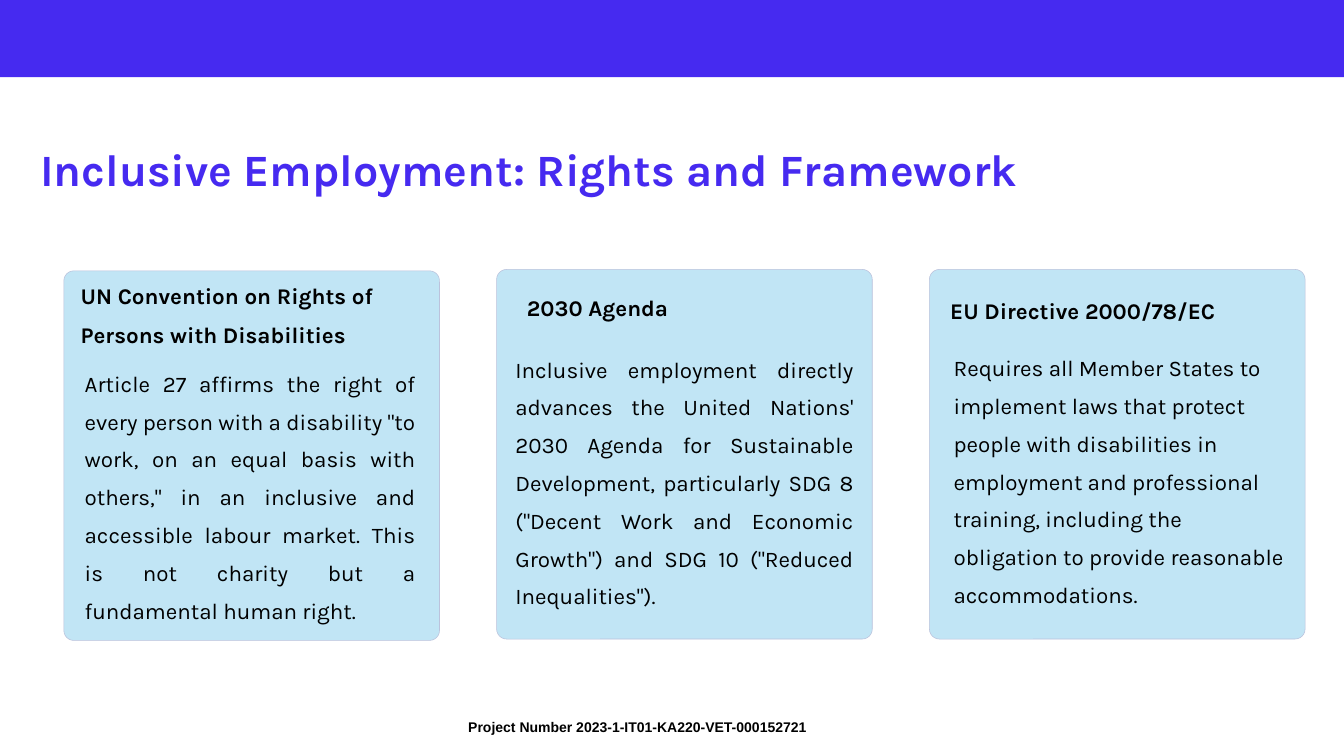
from pptx import Presentation
from pptx.dml.color import RGBColor
from pptx.enum.shapes import MSO_SHAPE
from pptx.enum.text import MSO_ANCHOR, MSO_AUTO_SIZE, PP_ALIGN
from pptx.util import Pt

RECTANGLE = MSO_SHAPE.RECTANGLE
ROUNDED = MSO_SHAPE.ROUNDED_RECTANGLE
MIDDLE = MSO_ANCHOR.MIDDLE
FIT_SHAPE = MSO_AUTO_SIZE.SHAPE_TO_FIT_TEXT
LEFT, JUSTIFY = PP_ALIGN.LEFT, PP_ALIGN.JUSTIFY

COLORS = {"brand": "462AF0", "card": "C1E5F5", "border": "BBC2DC", "text": "000000"}
SLIDE_WIDTH, SLIDE_HEIGHT = 1440, 810
CARD_WIDTH, CARD_HEIGHT = 402.5, 396
CARD_LEFT, CARD_PITCH = 68.4, 463.7

CARDS = [
    {
        "top": 290.2,
        "heading": "UN Convention on Rights of Persons with Disabilities",
        "heading_box": (18, -1.4, 362.2, 84.2),
        "body": "Article 27 affirms the right of every person with a disability "
                "\"to work, on an equal basis with others,\" in an inclusive and "
                "accessible labour market. This is not charity but a fundamental "
                "human right.",
        "body_box": (22.3, 94.3, 354.2, 245.5),
        "align": JUSTIFY,
    },
    {
        "top": 288.7,
        "heading": "2030 Agenda",
        "heading_box": (32.4, 13, 275, 41.8),
        "body": "Inclusive employment directly advances the United Nations' 2030 "
                "Agenda for Sustainable Development, particularly SDG 8 (\"Decent "
                "Work and Economic Growth\") and SDG 10 (\"Reduced Inequalities\").",
        "body_box": (20.1, 80.7, 362.2, 286.6),
        "align": JUSTIFY,
    },
    {
        "top": 288.7,
        "heading": "EU Directive 2000/78/EC",
        "heading_box": (22.3, 16.6, 342, 41.8),
        "body": "Requires all Member States to implement laws that protect people "
                "with disabilities in employment and professional training, "
                "including the obligation to provide reasonable accommodations.",
        "body_box": (25.9, 79.2, 354.2, 245.5),
        "align": LEFT,
    },
]


def add_panel(slide, kind, box, fill):
    """Add a filled shape without shadow or outline."""
    shape = slide.shapes.add_shape(kind, *map(Pt, box))
    shape.shadow.inherit = False
    shape.fill.solid()
    shape.fill.fore_color.rgb = RGBColor.from_string(COLORS[fill])
    shape.line.fill.background()
    return shape


def add_text(slide, box, text, size, bold=False, color="text", font="Karla",
             spacing=None, align=LEFT, margins=(0, 0)):
    """Add a one-paragraph text box and return its text frame."""
    frame = slide.shapes.add_textbox(*map(Pt, box)).text_frame
    frame.word_wrap = True
    frame.margin_left = frame.margin_right = Pt(margins[0])
    frame.margin_top = frame.margin_bottom = Pt(margins[1])
    frame.text = text
    paragraph = frame.paragraphs[0]
    paragraph.alignment = align
    paragraph.line_spacing = spacing
    run_font = paragraph.runs[0].font
    run_font.name, run_font.size, run_font.bold = font, Pt(size), bold
    run_font.color.rgb = RGBColor.from_string(COLORS[color])
    return frame


def add_title(slide, box, text):
    """Add the vertically centred slide title."""
    frame = add_text(slide, box, text, 48, True, "brand", spacing=0.9, margins=(7.2, 3.6))
    frame.vertical_anchor = MIDDLE


def add_footer(slide, box, text):
    """Add the project number on a single line."""
    frame = add_text(slide, box, text, 15, True, font="Arial", margins=(7.2, 3.6))
    frame.word_wrap = False
    frame.auto_size = FIT_SHAPE


def add_card(slide, box, card):
    """Add a rounded card with its heading and body placed inside the box."""
    left, top = box[:2]
    panel = add_panel(slide, ROUNDED, box, "card")
    panel.adjustments[0] = 0.027
    panel.line.color.rgb = RGBColor.from_string(COLORS["border"])
    panel.line.width = Pt(0.6)
    for part, bold, spacing, align in (("heading", True, 42, LEFT),
                                       ("body", False, 40.5, card["align"])):
        x, y, width, height = card[f"{part}_box"]
        add_text(slide, (left + x, top + y, width, height), card[part], 24, bold,
                 spacing=Pt(spacing), align=align)


def main():
    """Build and save the presentation."""
    presentation = Presentation()
    presentation.slide_width = Pt(SLIDE_WIDTH)
    presentation.slide_height = Pt(SLIDE_HEIGHT)
    slide = presentation.slides.add_slide(presentation.slide_layouts[6])
    add_footer(slide, (494.6, 766.8, 382.3, 25.2),
               "Project Number 2023-1-IT01-KA220-VET-000152721")
    add_panel(slide, RECTANGLE, (0, -1.4, SLIDE_WIDTH, 84.2), "brand")
    add_title(slide, (36, 113, 1383.8, 143.3), "Inclusive Employment: Rights and Framework")
    for index, card in enumerate(CARDS):
        left = CARD_LEFT + index * CARD_PITCH
        add_card(slide, (left, card["top"], CARD_WIDTH, CARD_HEIGHT), card)
    presentation.save("out.pptx")


if __name__ == "__main__":
    main()
